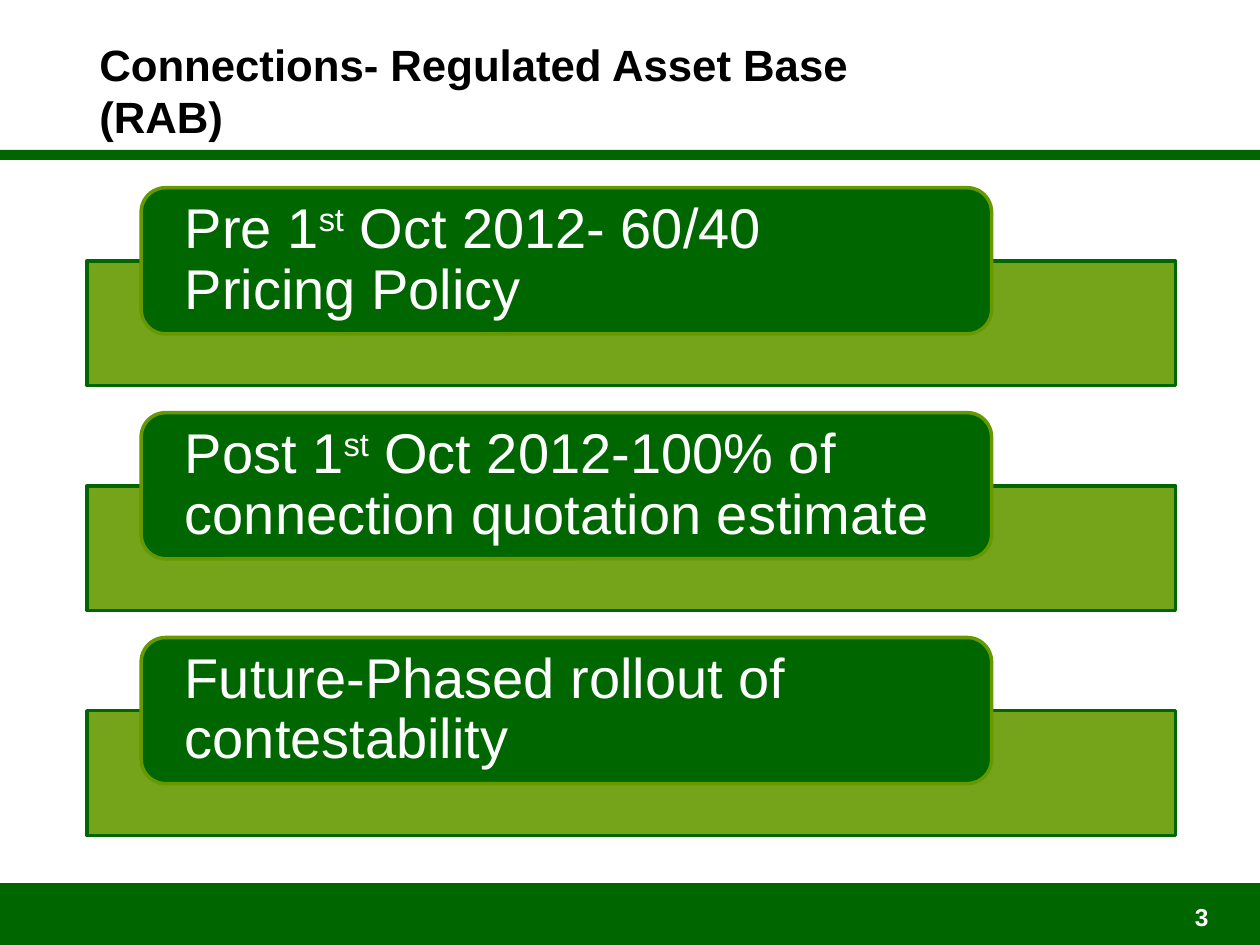
from dataclasses import dataclass

from lxml import etree
from pptx import Presentation
from pptx import util as u
from pptx.dml.color import RGBColor
from pptx.enum import shapes, text
from pptx.oxml.ns import qn

Inches = u.Inches


@dataclass(frozen=True)
class Theme:
    dark: RGBColor = RGBColor(0x00, 0x66, 0x00)
    light: RGBColor = RGBColor(0x66, 0x99, 0x00)
    white: RGBColor = RGBColor(0xFF, 0xFF, 0xFF)
    black: RGBColor = RGBColor(0x00, 0x00, 0x00)
    font: str = "Arial"
    title_size: int = 25
    card_size: int = 32
    number_size: int = 14


THEME = Theme()
CARDS = [
    "Pre 1^st^ Oct 2012- 60/40 Pricing Policy",
    "Post 1^st^ Oct 2012-100% of connection quotation estimate",
    "Future-Phased rollout of contestability",
]


def write_text(shape, content, *, size, color, bold=False, inset=0.1, spacing=None,
               align=text.PP_ALIGN.LEFT, anchor=text.MSO_ANCHOR.MIDDLE):
    """Fill a shape with one paragraph; text between ^ marks is superscript."""
    frame = shape.text_frame
    frame.word_wrap = True
    frame.vertical_anchor = anchor
    frame.margin_left = frame.margin_right = Inches(inset)
    paragraph = frame.paragraphs[0]
    paragraph.alignment = align
    paragraph.line_spacing = spacing
    for index, part in enumerate(content.split("^")):
        run = paragraph.add_run()
        run.text = part
        run.font.name = THEME.font
        run.font.size = u.Pt(size)
        run.font.bold = bold
        run.font.color.rgb = color
        if index % 2:
            run.font._element.set("baseline", "30000")


def add_block(slide, kind, box, fill, line=None, opacity=None):
    shape = slide.shapes.add_shape(kind, *map(Inches, box))
    shape.shadow.inherit = False
    shape.fill.solid()
    shape.fill.fore_color.rgb = fill
    if line is None:
        shape.line.fill.background()
    else:
        shape.line.color.rgb = line
        shape.line.width = u.Pt(2)
    if opacity is not None:
        color = shape._element.spPr.find(qn("a:solidFill"))[0]
        etree.SubElement(color, qn("a:alpha")).set("val", str(opacity * 1000))
    return shape


def add_header(slide, left, top, width, height):
    add_block(slide, shapes.MSO_SHAPE.RECTANGLE, (0, 1.19, 10, 0.08), THEME.dark)
    title = slide.shapes.add_textbox(*map(Inches, (left, top, width, height)))
    write_text(title, "Connections- Regulated Asset Base (RAB)",
               size=THEME.title_size, color=THEME.black, bold=True)


def add_footer(slide, left, top, width, height):
    add_block(slide, shapes.MSO_SHAPE.RECTANGLE, (left, top, width, height), THEME.dark)
    number_box = (left + width - 2.64, top + 0.1, 2.33, 0.52)
    number = slide.shapes.add_textbox(*map(Inches, number_box))
    write_text(number, "3", size=THEME.number_size, color=THEME.white, bold=True,
               align=text.PP_ALIGN.RIGHT, anchor=text.MSO_ANCHOR.TOP)


def add_card_list(slide, left, top, width, height):
    """Stack the cards evenly, each overlapping the top of its wide band."""
    card_height, band_offset, band_height = 1.16, 0.58, 0.99
    item_height = band_offset + band_height
    pitch = (height - item_height) / (len(CARDS) - 1)
    for index, content in enumerate(CARDS):
        y = top + index * pitch
        add_block(slide, shapes.MSO_SHAPE.RECTANGLE,
                  (left, y + band_offset, width, band_height),
                  THEME.light, THEME.dark, opacity=90)
        card = add_block(slide, shapes.MSO_SHAPE.ROUNDED_RECTANGLE,
                         (left + 0.43, y, 6.75, card_height), THEME.dark, THEME.light)
        write_text(card, content, size=THEME.card_size, color=THEME.white,
                   inset=0.29, spacing=0.9)


def main():
    presentation = Presentation()
    presentation.slide_width = Inches(10)
    presentation.slide_height = Inches(7.5)
    slide = presentation.slides.add_slide(presentation.slide_layouts[6])
    add_footer(slide, 0, 7.01, 10, 0.49)
    add_header(slide, 0.69, 0.21, 6.44, 1.01)
    add_card_list(slide, 0.69, 1.49, 8.64, 5.14)
    presentation.save("out.pptx")


if __name__ == "__main__":
    main()
